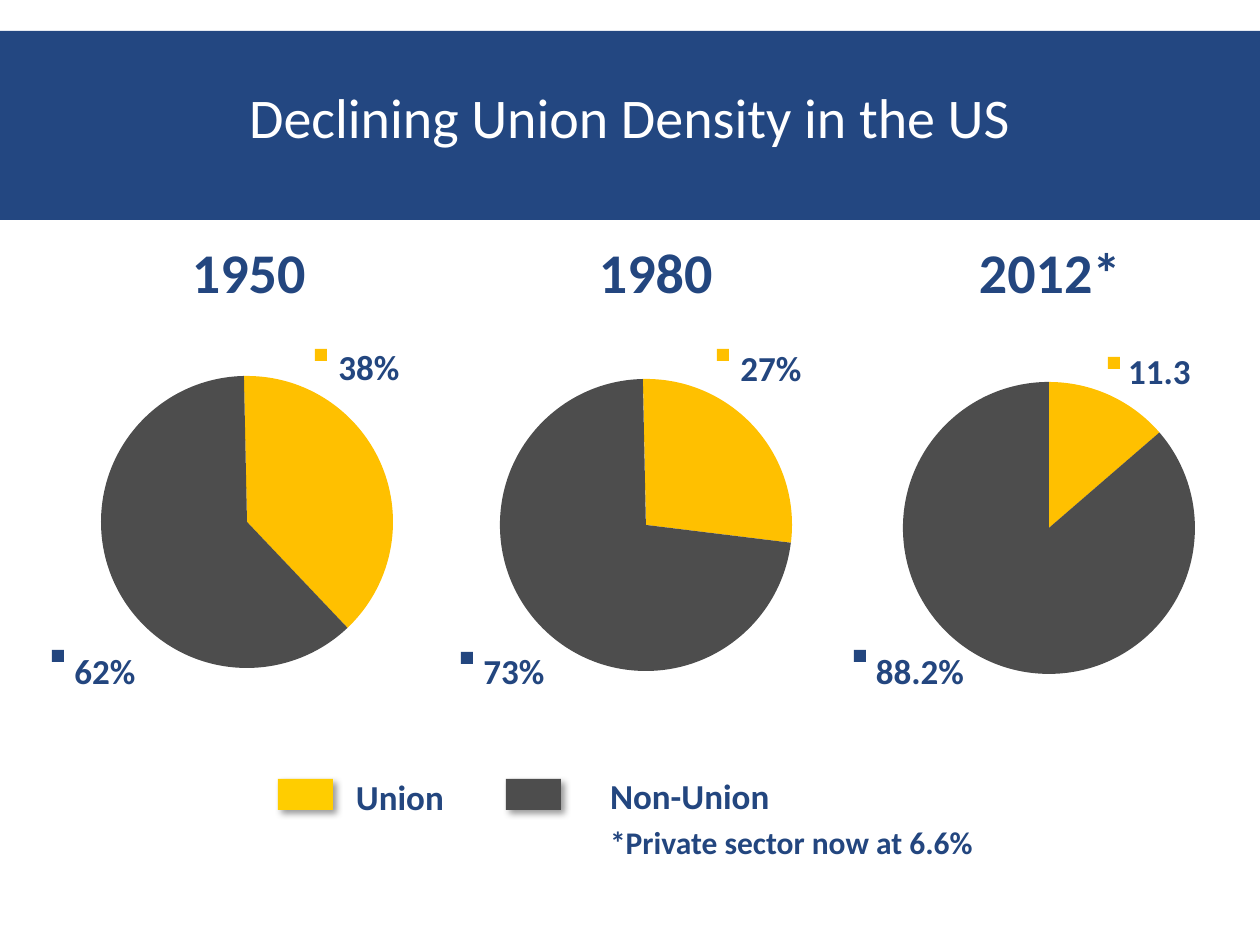
import math

from lxml import etree
from pptx import Presentation
from pptx import util as u
from pptx.dml.color import RGBColor
from pptx.enum import shapes, text
from pptx.oxml import ns

PX = 7257
BAND_BLUE = RGBColor(0x23, 0x47, 0x81)
TEXT_BLUE = RGBColor(0x23, 0x46, 0x7F)
WHITE = RGBColor(0xFF, 0xFF, 0xFF)
UNION_GOLD = RGBColor(0xFF, 0xC0, 0x00)
LEGEND_GOLD = RGBColor(0xFF, 0xCD, 0x00)
NON_UNION_GREY = RGBColor(0x4D, 0x4D, 0x4D)
RADIUS = 146 * PX

presentation = Presentation()
presentation.slide_width = u.Inches(10)
presentation.slide_height = u.Inches(7.5)
slide = presentation.slides.add_slide(presentation.slide_layouts[5])


def add_rectangle(left, top, width, height, color):
    shape = slide.shapes.add_shape(
        shapes.MSO_SHAPE.RECTANGLE, left * PX, top * PX, width * PX, height * PX
    )
    shape.shadow.inherit = False
    shape.fill.solid()
    shape.fill.fore_color.rgb = color
    shape.line.fill.background()
    return shape


def add_label(left, top, width, height, lines, margin=0, wrap=False, align=text.PP_ALIGN.LEFT):
    box = slide.shapes.add_textbox(left * PX, top * PX, width * PX, height * PX)
    frame = box.text_frame
    frame.margin_left = frame.margin_right = 2 * margin * PX
    frame.margin_top = frame.margin_bottom = margin * PX
    frame.word_wrap = wrap
    frame.auto_size = text.MSO_AUTO_SIZE.SHAPE_TO_FIT_TEXT
    for index, (words, size) in enumerate(lines):
        paragraph = frame.add_paragraph() if index else frame.paragraphs[0]
        paragraph.text = words
        paragraph.alignment = align
        if index:
            paragraph.space_before = u.Pt(3.6)
        paragraph.font.name = "Calibri"
        paragraph.font.size = u.Pt(size)
        paragraph.font.bold = True
        paragraph.font.color.rgb = TEXT_BLUE
    return box


band = add_rectangle(0, 31, 1260, 189, BAND_BLUE)
presentation.slide_master.shapes.element.insert(2, band.element)

title = slide.shapes.title
title.left, title.top, title.width, title.height = 63 * PX, 38 * PX, 1134 * PX, 157 * PX
title.text_frame.text = "Declining Union Density in the US"
title.text_frame.vertical_anchor = text.MSO_ANCHOR.MIDDLE
paragraph = title.text_frame.paragraphs[0]
paragraph.alignment = text.PP_ALIGN.CENTER
paragraph.font.name = "Calibri"
paragraph.font.size = u.Pt(32)
paragraph.font.color.rgb = WHITE

for left, color in ((278, LEGEND_GOLD), (506, NON_UNION_GREY)):
    swatch = add_rectangle(left, 779, 55, 31, color)
    effects = swatch.element.spPr.find(ns.qn("a:effectLst"))
    shadow = etree.SubElement(
        effects, ns.qn("a:outerShdw"), blurRad="50800", dist="38100", dir="2700000"
    )
    shadow_color = etree.SubElement(shadow, ns.qn("a:srgbClr"), val="000000")
    etree.SubElement(shadow_color, ns.qn("a:alpha"), val="40000")

add_label(344, 769, 168, 54, [("Union", 20)], margin=6, wrap=True)
add_label(
    598, 769, 536, 101,
    [("Non-Union", 20), ("*Private sector now at 6.6%", 18)],
    margin=6, wrap=True,
)

pies = [
    ("2012*", 967, 169, (1049, 528), 0, 49.2,
     ("11.3", 1124, 349, 71, 1108, 357), ("88.2%", 838, 649, 164, 854, 650)),
    ("1980", 587, 140, (646, 525), -1.2, 97,
     ("27%", 740, 346, 62, 717, 349), ("73%", 483, 649, 62, 461, 652)),
    ("1950", 180, 140, (247, 522), -1.2, 136.5,
     ("38%", 338, 345, 62, 315, 349), ("62%", 74, 649, 62, 52, 650)),
]
for year, year_left, year_width, center, start, split, union, non_union in pies:
    center_x, center_y = center[0] * PX, center[1] * PX
    slices = ((start, split, UNION_GOLD), (split, start + 360, NON_UNION_GREY))
    for first, last, color in slices:
        quadrants = [degrees for degrees in (0, 90, 180, 270, 360) if first < degrees < last]
        angles = [math.radians(degrees) for degrees in (first, *quadrants, last)]
        arc = [
            (center_x + RADIUS * math.sin(angle), center_y - RADIUS * math.cos(angle))
            for angle in angles
        ]
        builder = slide.shapes.build_freeform(*arc[0])
        builder.add_line_segments([*arc[1:], (center_x, center_y)], close=True)
        pie_slice = builder.convert_to_shape()
        pie_slice.shadow.inherit = False
        pie_slice.fill.solid()
        pie_slice.fill.fore_color.rgb = color
        pie_slice.line.fill.background()

        chords = list(pie_slice.element.iter(ns.qn("a:lnTo")))[:-1]
        for index, chord in enumerate(chords):
            begin, end = angles[index:index + 2]
            (x1, y1), (x2, y2) = arc[index:index + 2]
            reach = RADIUS * 4 / 3 * math.tan((end - begin) / 4)
            controls = (
                (x1 + reach * math.cos(begin), y1 + reach * math.sin(begin)),
                (x2 - reach * math.cos(end), y2 - reach * math.sin(end)),
                (x2, y2),
            )
            curve = etree.Element(ns.qn("a:cubicBezTo"))
            for x, y in controls:
                etree.SubElement(
                    curve, ns.qn("a:pt"),
                    x=str(round(x - pie_slice.left)), y=str(round(y - pie_slice.top)),
                )
            chord.getparent().replace(chord, curve)

    for share, marker_color in ((union, UNION_GOLD), (non_union, TEXT_BLUE)):
        value, left, top, width, marker_left, marker_top = share
        add_rectangle(marker_left, marker_top, 12, 12, marker_color)
        add_label(left, top, width, 43, [(value, 20)], align=text.PP_ALIGN.CENTER)

    year_label = add_label(year_left, 231, year_width, 81, [(year, 32)], margin=6)
    year_label.fill.solid()
    year_label.fill.fore_color.rgb = WHITE

presentation.save("out.pptx")
